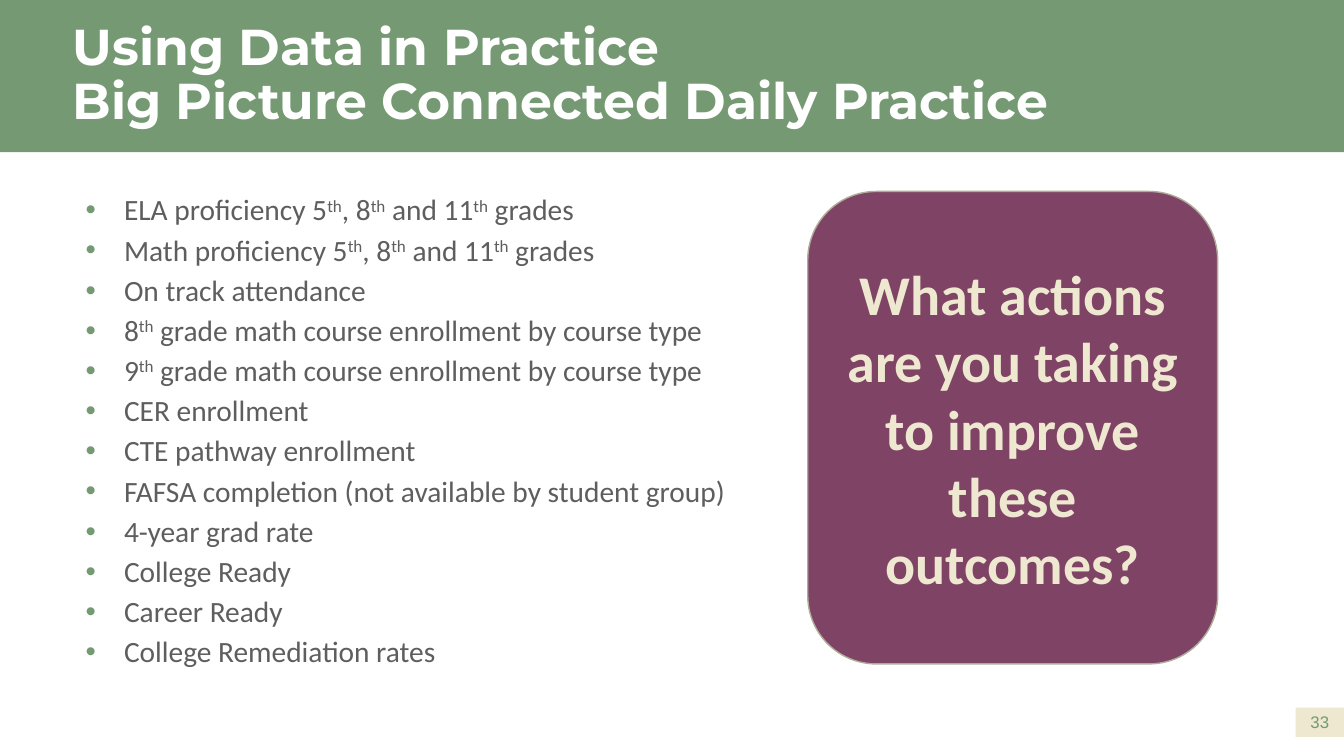
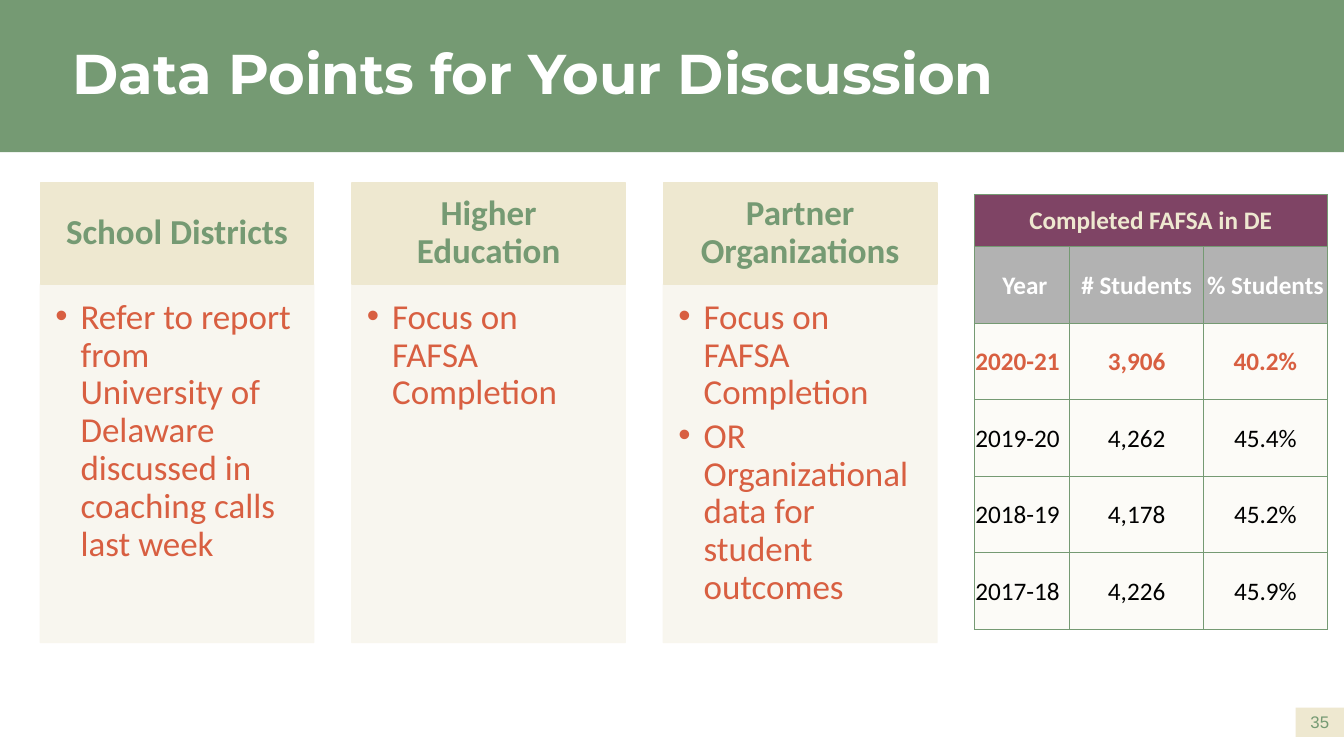
from pptx import Presentation
from pptx.dml.color import RGBColor
from pptx.enum.shapes import MSO_SHAPE as SHAPE
from pptx.enum.text import MSO_ANCHOR as ANCHOR, MSO_AUTO_SIZE as AUTO, PP_ALIGN as ALIGN
from pptx.oxml.ns import qn
from pptx.util import Inches, Pt
from lxml.etree import SubElement

COLORS = {
    "green": "759A73", "cream": "EEE8D0", "plum": "7F4465", "orange": "D85F41",
    "gray": "5E5E5E", "silver": "B2B2B2", "stone": "B0AC9A", "panel": "F8F6EE",
    "ivory": "FCFBF7", "white": "FFFFFF", "black": "000000",
}
WIDTH, HEIGHT = Inches(13.33), Inches(7.5)
BAND_H = 20.13  # percent of the slide height

# Boxes are (left, top, width, height) in percent of the slide
TITLE_BOX = (3.15, 0, 85.15, BAND_H)
NUMBER_BOX = (96.4, 93.6, 3.6, 3.87)

MEASURES = [
    "ELA proficiency 5^th^, 8^th^ and 11^th^ grades",
    "Math proficiency 5^th^, 8^th^ and 11^th^ grades",
    "On track attendance",
    "8^th^ grade math course enrollment by course type",
    "9^th^ grade math course enrollment by course type",
    "CER enrollment",
    "CTE pathway enrollment",
    "FAFSA completion (not available by student group)",
    "4-year grad rate",
    "College Ready",
    "Career Ready",
    "College Remediation rates",
]
AUDIENCES = [
    ("School Districts", ["Refer to report from University of Delaware "
                          "discussed in coaching calls last week"]),
    ("Higher Education", ["Focus on FAFSA Completion"]),
    ("Partner Organizations", ["Focus on FAFSA Completion",
                               "OR Organizational data for student outcomes"]),
]
FAFSA_ROWS = [
    ["Completed FAFSA in DE", "", ""],
    ["\N{NO-BREAK SPACE}Year", "# Students", "% Students"],
    ["2020-21", "3,906", "40.2%"],
    ["2019-20", "4,262", "45.4%"],
    ["2018-19", "4,178", "45.2%"],
    ["2017-18", "4,226", "45.9%"],
]


# Shared helpers
def rgb(name):
    return RGBColor.from_string(COLORS[name])


def emu(box):
    x, y, w, h = box
    return [int(v * side / 100) for v, side in
            ((x, WIDTH), (y, HEIGHT), (w, WIDTH), (h, HEIGHT))]


def place(sp, box):
    sp.left, sp.top, sp.width, sp.height = emu(box)


def set_frame(tf, anchor=ANCHOR.MIDDLE, margins=(0.1, 0.05, 0.1, 0.05)):
    tf.word_wrap = True
    tf.auto_size = AUTO.NONE
    tf.vertical_anchor = anchor
    (tf.margin_left, tf.margin_top,
     tf.margin_right, tf.margin_bottom) = map(Inches, margins)


def write(p, text, size, color, font="Calibri", bold=False, align=ALIGN.LEFT,
          spacing=None, after=0):
    """Fill a paragraph; text between carets is superscript."""
    p.alignment = align
    p.space_before, p.space_after = Pt(0), Pt(after)
    if spacing:
        p.line_spacing = spacing
    for i, part in enumerate(text.split("^")):
        r = p.add_run()
        r.text = part
        f = r.font
        f.name, f.size, f.bold, f.color.rgb = font, Pt(size), bold, rgb(color)
        if i % 2:
            r._r.get_or_add_rPr().set("baseline", "30000")


def write_list(tf, items, indent, bullet_color, **fmt):
    for i, item in enumerate(items):
        p = tf.paragraphs[0] if i == 0 else tf.add_paragraph()
        pPr = p._p.get_or_add_pPr()
        pPr.set("marL", str(Inches(indent)))
        pPr.set("indent", str(-Inches(indent)))
        clr = SubElement(pPr, qn("a:buClr"))
        SubElement(clr, qn("a:srgbClr"), val=COLORS[bullet_color])
        SubElement(pPr, qn("a:buFont"), typeface="Arial")
        SubElement(pPr, qn("a:buChar"), char="•")
        write(p, item, spacing=0.9, **fmt)


def add_block(s, box, fill, line=None, kind=SHAPE.RECTANGLE, opacity=None):
    sp = s.shapes.add_shape(kind, *emu(box))
    sp.shadow.inherit = False
    sp.fill.solid()
    sp.fill.fore_color.rgb = rgb(fill)
    if line:
        sp.line.color.rgb, sp.line.width = rgb(line), Pt(1)
    else:
        sp.line.fill.background()
    if opacity:
        for clr in sp._element.spPr.iter(qn("a:srgbClr")):
            SubElement(clr, qn("a:alpha"), val=str(opacity * 1000))
    return sp


# Band behind every title, kept on the master
def add_master_band(prs, s):
    band = add_block(s, (0, 0, 100, BAND_H), "green")
    prs.slide_master.shapes._spTree.insert(2, band._element)


# Title and slide number
def add_slide(prs, layout, title, size, number):
    s = prs.slides.add_slide(prs.slide_layouts.get_by_name(layout))
    place(s.shapes.title, TITLE_BOX)
    tf = s.shapes.title.text_frame
    set_frame(tf, margins=(0.3, 0.05, 0.1, 0.05))
    p = tf.paragraphs[0]
    for i, line in enumerate(title.split("\n")):
        if i:
            p.add_line_break()
        write(p, line, size, "white", font="Montserrat", bold=True, spacing=0.9)
    tag = add_block(s, NUMBER_BOX, "cream")
    set_frame(tag.text_frame, margins=(0, 0, 0, 0))
    write(tag.text_frame.paragraphs[0], number, 12, "green", font="Arial",
          align=ALIGN.CENTER)
    return s


# Bulleted list in the body placeholder
def fill_body(s, box, items):
    body = s.placeholders[1]
    place(body, box)
    set_frame(body.text_frame, ANCHOR.TOP)
    write_list(body.text_frame, items, 0.38, "green", size=21, color="gray", after=6)


# Rounded panel with a question
def add_question(s, box, text):
    sp = add_block(s, box, "plum", "stone", SHAPE.FLOWCHART_ALTERNATE_PROCESS)
    set_frame(sp.text_frame)
    write(sp.text_frame.paragraphs[0], text, 40, "cream", bold=True, align=ALIGN.CENTER)


# Headed column with a list
def add_column(s, box, heading, items, head_share=0.22):
    x, y, w, h = box
    head_h = h * head_share
    panel = add_block(s, (x, y + head_h, w, h - head_h), "panel", "panel", opacity=90)
    set_frame(panel.text_frame, ANCHOR.TOP, (0.15, 0.15, 0.19, 0.22))
    write_list(panel.text_frame, items, 0.25, "orange", size=25, color="orange", after=4)
    head = add_block(s, (x, y, w, head_h), "cream", "cream")
    set_frame(head.text_frame, margins=(0.19, 0.11, 0.19, 0.11))
    write(head.text_frame.paragraphs[0], heading, 25, "green", bold=True,
          align=ALIGN.CENTER, spacing=0.9)


# Completion table
def format_cell(cell, text, fill, **fmt):
    tcPr = cell._tc.get_or_add_tcPr()
    for side in ("lnL", "lnR", "lnT", "lnB"):
        ln = SubElement(tcPr, qn(f"a:{side}"), w=str(Pt(1)))
        SubElement(SubElement(ln, qn("a:solidFill")), qn("a:srgbClr"), val=COLORS["green"])
    cell.fill.solid()
    cell.fill.fore_color.rgb = rgb(fill)
    cell.vertical_anchor = ANCHOR.MIDDLE
    cell.margin_left = cell.margin_top = cell.margin_right = Inches(0.01)
    cell.margin_bottom = 0
    write(cell.text_frame.paragraphs[0], text, 18, **fmt)


def add_fafsa_table(s, box, rows):
    col_shares = (0.27, 0.38, 0.35)
    row_shares = [0.12] + [0.88 / (len(rows) - 1)] * (len(rows) - 1)
    x, y, w, h = emu(box)
    table = s.shapes.add_table(len(rows), len(col_shares), x, y, w, h).table
    table.first_row = table.horz_banding = False
    for col, share in zip(table.columns, col_shares):
        col.width = int(w * share)
    for row, share in zip(table.rows, row_shares):
        row.height = int(h * share)
    # Fill, text colour and weight: caption, headings, latest year, then the rest
    styles = [("plum", "cream", True), ("silver", "white", True), ("ivory", "orange", True)]
    styles += [("ivory", "black", False)] * (len(rows) - len(styles))
    for i, (values, (fill, color, bold)) in enumerate(zip(rows, styles)):
        for j, value in enumerate(values):
            align = ALIGN.LEFT if i > 1 and j == 0 else ALIGN.CENTER
            format_cell(table.cell(i, j), value, fill, color=color, bold=bold, align=align)
    table.cell(0, 0).merge(table.cell(0, len(col_shares) - 1))


# Slides
def build_practice(prs):
    s = add_slide(prs, "Title and Content",
                  "Using Data in Practice\nBig Picture Connected Daily Practice", 36, "33")
    add_master_band(prs, s)
    fill_body(s, (5.63, 25.2, 51.24, 65), MEASURES)
    add_question(s, (60.1, 25.33, 30.5, 62.5),
                 "What actions are you taking to improve these outcomes?")


def build_discussion(prs):
    s = add_slide(prs, "Title Only", "Data Points for Your Discussion", 40, "35")
    left, pitch, width = 3, 23.18, 20.35
    for i, (heading, items) in enumerate(AUDIENCES):
        add_column(s, (left + i * pitch, 24.2, width, 60.8), heading, items)
    add_fafsa_table(s, (72.5, 25.75, 26.25, 57.5), FAFSA_ROWS)


def main():
    prs = Presentation()
    prs.slide_width, prs.slide_height = WIDTH, HEIGHT
    build_practice(prs)
    build_discussion(prs)
    prs.save("out.pptx")


if __name__ == "__main__":
    main()
